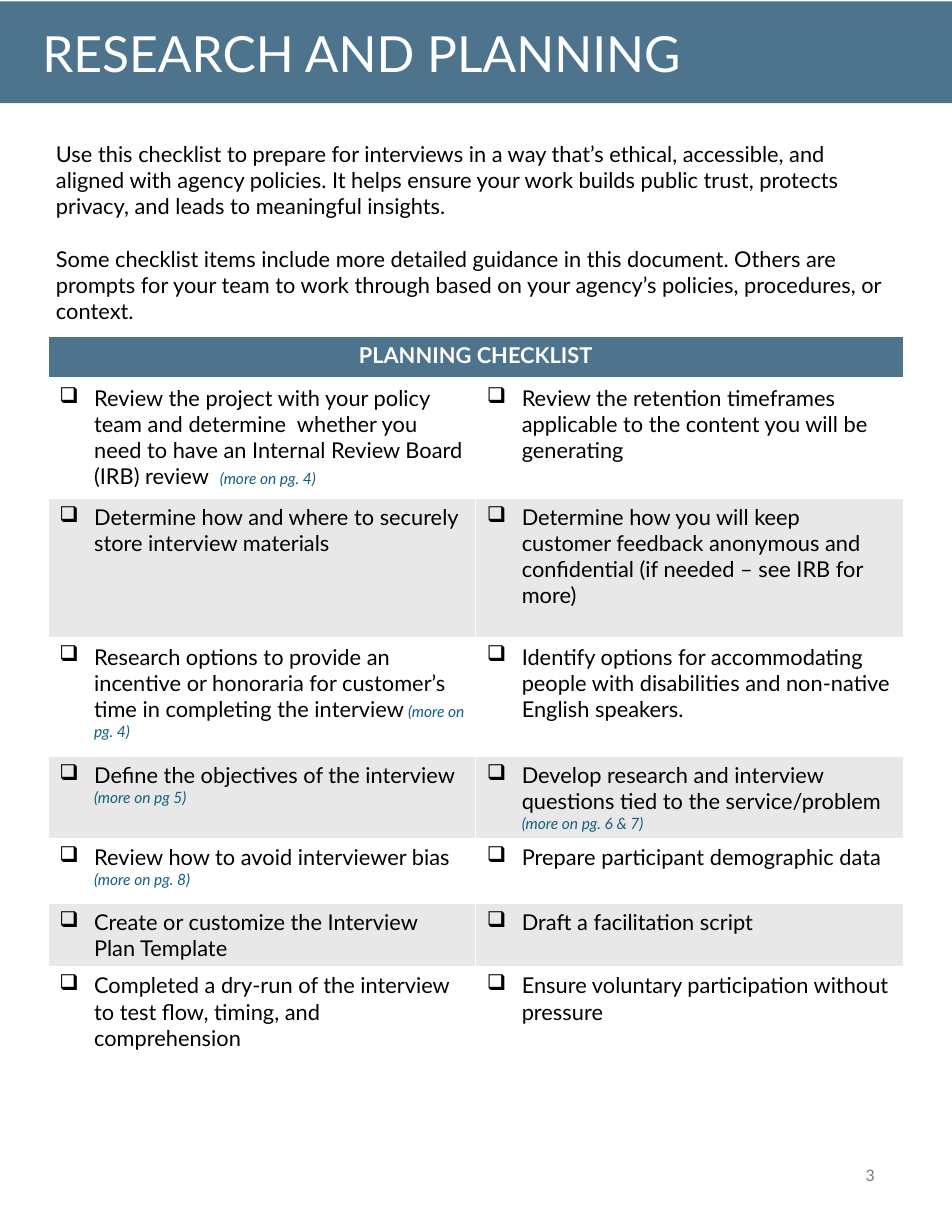
"""Build the research and planning checklist page."""
from lxml import etree
from pptx import Presentation, util as u
from pptx.dml.color import RGBColor
from pptx.enum import shapes, text
from pptx.oxml import ns

BLUE, WHITE, BLACK, STRIPE = "4E738D", "FFFFFF", "000000", "E8E8E8"
BODY = {"size": 14, "color": BLACK}
NOTE = {"size": 10, "color": "156082", "italic": True}
HEADING = {"size": 14, "color": WHITE, "bold": True}
INTRO = [
    "Use this checklist to prepare for interviews in a way that’s ethical, accessible, and aligned with "
    "agency policies. It helps ensure your work builds public trust, protects privacy, and leads to "
    "meaningful insights.",
    "Some checklist items include more detailed guidance in this document. Others are prompts for your "
    "team to work through based on your agency’s policies, procedures, or context.",
]
CHECKLIST = [
    (2.7, ("Review the project with your policy team and determine  whether you need to have an "
           "Internal Review Board (IRB) review  ", "(more on pg. 4)"),
     ("Review the retention timeframes applicable to the content you will be generating",)),
    (3.17, ("Determine how and where to securely store interview materials",),
     ("Determine how you will keep customer feedback anonymous and confidential "
      "(if needed – see IRB for more)",)),
    (2.68, ("Research options to provide an incentive or honoraria for customer’s time in completing "
            "the interview", " (more on pg. 4)"),
     ("Identify options for accommodating people with disabilities and non-native English speakers.",)),
    (1.81, ("Define the objectives of the interview ", " (more on pg 5)"),
     ("Develop research and interview questions tied to the service/problem ", " (more on pg. 6 & 7)")),
    (1.47, ("Review how to avoid interviewer bias ", "(more on pg. 8)"),
     ("Prepare participant demographic data",)),
    (1.43, ("Create or customize the Interview Plan Template",), ("Draft a facilitation script",)),
    (2.01, ("Completed a dry-run of the interview to test flow, timing, and comprehension",),
     ("Ensure voluntary participation without pressure",)),
]
HEADER_HEIGHT, COLUMN_WIDTH, INDENT = 0.98, 9.7, 0.79


def rgb(value):
    return RGBColor.from_string(value)


def fill(item, color):
    item.fill.solid()
    item.fill.fore_color.rgb = rgb(color)


def add_run(paragraph, content, style):
    run = paragraph.add_run()
    run.text = content
    values = {"name": "Lato", "bold": False, "italic": False, **style}
    run.font.color.rgb = rgb(values.pop("color"))
    values["size"] = u.Pt(values["size"])
    for name, value in values.items():
        setattr(run.font, name, value)


def add_text(slide, box, paragraphs, style, gap=0, align=text.PP_ALIGN.LEFT, **frame_format):
    frame = slide.shapes.add_textbox(*map(u.Cm, box)).text_frame
    for name, value in {"word_wrap": True, **frame_format}.items():
        setattr(frame, name, value)
    for index, content in enumerate(paragraphs):
        paragraph = frame.add_paragraph() if index else frame.paragraphs[0]
        paragraph.alignment = align
        paragraph.space_before = u.Pt(gap if index else 0)
        add_run(paragraph, content, style)


def add_border(cell, bottom=1):
    properties = cell._tc.get_or_add_tcPr()
    for index, (side, width) in enumerate({"L": 1, "R": 1, "T": 1, "B": bottom}.items()):
        line = etree.Element(ns.qn(f"a:ln{side}"), w=str(u.Pt(width)))
        solid = etree.SubElement(line, ns.qn("a:solidFill"))
        etree.SubElement(solid, ns.qn("a:srgbClr"), val=WHITE)
        properties.insert(index, line)


def add_item(cell, runs):
    paragraph = cell.text_frame.paragraphs[0]
    properties = paragraph._p.get_or_add_pPr()
    properties.set("marL", str(u.Cm(INDENT)))
    properties.set("indent", str(-u.Cm(INDENT)))
    etree.SubElement(properties, ns.qn("a:buChar"), char="❑")
    for content, style in zip(runs, (BODY, NOTE)):
        add_run(paragraph, content, style)


def add_checklist(slide, left, top):
    heights = [HEADER_HEIGHT] + [row[0] for row in CHECKLIST]
    box = map(u.Cm, (left, top, 2 * COLUMN_WIDTH, sum(heights)))
    table = slide.shapes.add_table(len(heights), 2, *box).table
    for row, height in zip(table.rows, heights):
        row.height = u.Cm(height)
    header = table.cell(0, 0)
    header.merge(table.cell(0, 1))
    paragraph = header.text_frame.paragraphs[0]
    paragraph.alignment = text.PP_ALIGN.CENTER
    add_run(paragraph, "PLANNING CHECKLIST", HEADING)
    for column in range(2):
        fill(table.cell(0, column), BLUE)
        add_border(table.cell(0, column), bottom=3)
    for index, (_, *items) in enumerate(CHECKLIST, 1):
        for column, runs in enumerate(items):
            cell = table.cell(index, column)
            add_item(cell, runs)
            fill(cell, WHITE if index % 2 else STRIPE)
            add_border(cell)


def main():
    presentation = Presentation()
    presentation.slide_width, presentation.slide_height = u.Cm(21.59), u.Cm(27.94)
    slide = presentation.slides.add_slide(presentation.slide_layouts[6])
    banner = slide.shapes.add_shape(shapes.MSO_SHAPE.RECTANGLE, *map(u.Cm, (0, 0.03, 21.59, 2.31)))
    banner.shadow.inherit = False
    banner.line.fill.background()
    fill(banner, BLUE)
    grow = text.MSO_AUTO_SIZE.SHAPE_TO_FIT_TEXT
    add_text(slide, (0.71, 0.38, 19.71, 1.63), ["RESEARCH AND PLANNING"],
             {"size": 32, "color": WHITE}, auto_size=grow)
    add_text(slide, (15.24, 25.91, 4.85, 1.5), ["3"], {"size": 10.2, "color": "797979"},
             align=text.PP_ALIGN.RIGHT, vertical_anchor=text.MSO_ANCHOR.MIDDLE)
    add_checklist(slide, 1.09, 7.62)
    add_text(slide, (1.02, 3.07, 19.41, 3.84), INTRO, BODY, gap=16.8, auto_size=grow)
    presentation.save("out.pptx")


if __name__ == "__main__":
    main()
